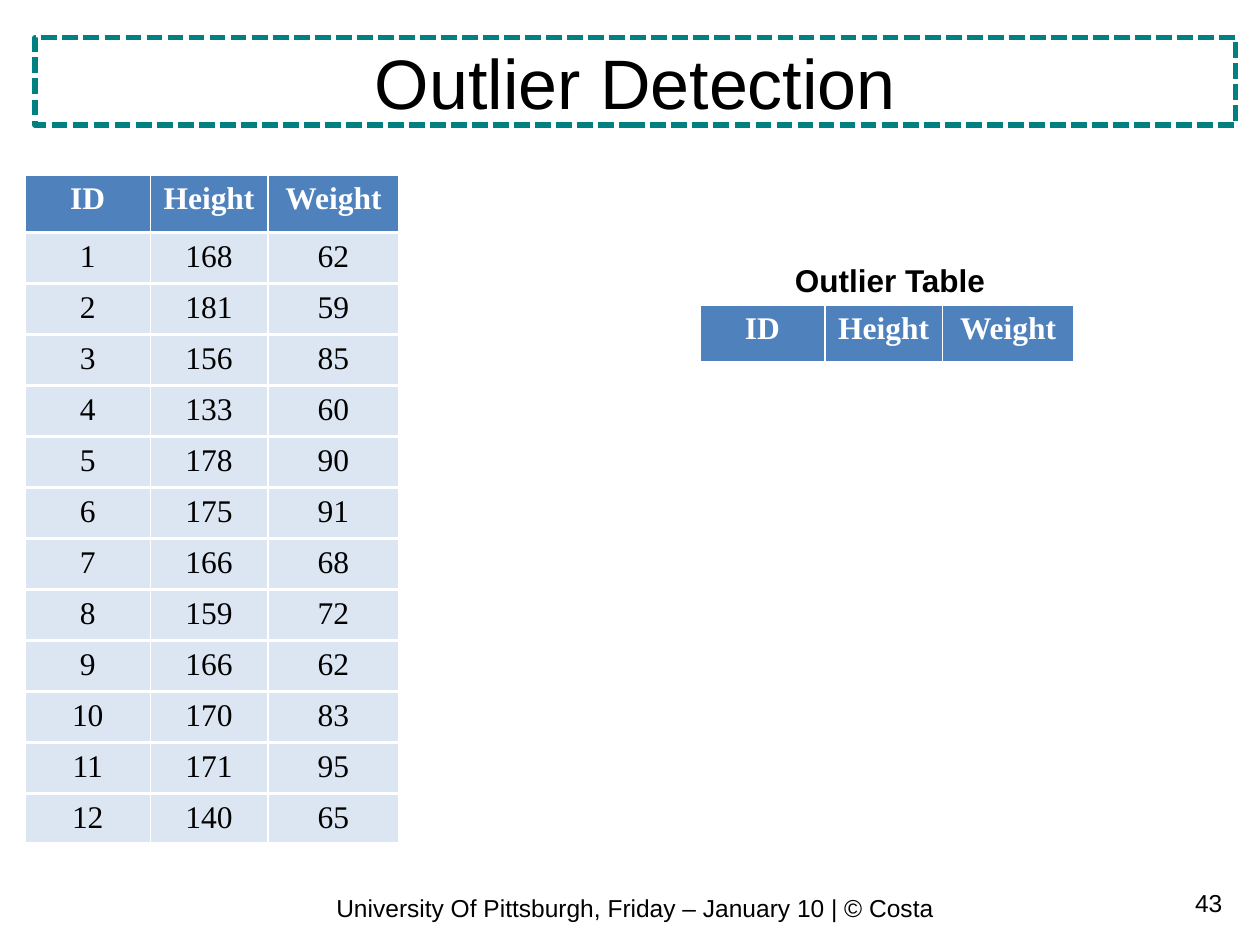
from dataclasses import dataclass
from itertools import accumulate

from lxml.etree import SubElement
from pptx import Presentation
from pptx.dml.color import RGBColor
from pptx.enum.dml import MSO_LINE
from pptx.enum.shapes import MSO_SHAPE
from pptx.enum.text import MSO_ANCHOR, PP_ALIGN
from pptx.oxml.ns import qn
from pptx.util import Pt


@dataclass(frozen=True)
class Theme:
    black: str = "000000"
    white: str = "FFFFFF"
    teal: str = "008080"
    header: str = "4F81BD"
    body: str = "DCE6F2"
    sans: str = "Arial"
    serif: str = "Times New Roman"
    title_size: float = 40
    body_size: float = 18
    footer_size: float = 14


@dataclass(frozen=True)
class Box:
    left: float
    top: float
    width: float
    height: float

    def lengths(self):
        return Pt(self.left), Pt(self.top), Pt(self.width), Pt(self.height)


@dataclass(frozen=True)
class Row:
    values: tuple
    height: float
    fill: str
    color: str
    bold: bool = False


THEME = Theme()
COLUMNS = (71.5, 67.2, 75)
BORDERS = {"a:lnL": 1, "a:lnR": 1, "a:lnT": 1, "a:lnB": 3}
HEADER = Row(("ID", "Height", "Weight"), 33.12, THEME.header, THEME.white, True)
MEASUREMENTS = [
    (168, 62), (181, 59), (156, 85), (133, 60), (178, 90), (175, 91),
    (166, 68), (159, 72), (166, 62), (170, 83), (171, 95), (140, 65),
]


def write(tf, text: str, *, size: float, font: str = THEME.sans,
          color: str = THEME.black, bold: bool = False,
          align: PP_ALIGN = PP_ALIGN.LEFT) -> None:
    p = tf.paragraphs[0]
    p.alignment = align
    r = p.add_run()
    r.text = text
    r.font.size = Pt(size)
    r.font.name = font
    r.font.bold = bold
    r.font.color.rgb = RGBColor.from_string(color)


def add_text(s, box: Box, text: str, **style) -> None:
    tf = s.shapes.add_textbox(*box.lengths()).text_frame
    tf.word_wrap = True
    write(tf, text, **style)


def add_title(s, box: Box, text: str) -> None:
    sp = s.shapes.add_shape(MSO_SHAPE.RECTANGLE, *box.lengths())
    sp.shadow.inherit = False
    sp.fill.background()
    sp.line.color.rgb = RGBColor.from_string(THEME.teal)
    sp.line.width = Pt(3)
    sp.line.dash_style = MSO_LINE.SQUARE_DOT
    sp.line._ln.find(qn("a:prstDash")).set("val", "sysDash")
    tf = sp.text_frame
    tf.word_wrap = True
    tf.vertical_anchor = MSO_ANCHOR.MIDDLE
    write(tf, text, size=THEME.title_size, align=PP_ALIGN.CENTER)


def add_borders(cell) -> None:
    tc_pr = cell._tc.get_or_add_tcPr()
    for tag, width in BORDERS.items():
        ln = SubElement(tc_pr, qn(tag), w=str(Pt(width)))
        fill = SubElement(ln, qn("a:solidFill"))
        SubElement(fill, qn("a:srgbClr"), val=THEME.white)


def add_row(s, left: float, top: float, row: Row) -> None:
    box = Box(left, top, sum(COLUMNS), row.height)
    table = s.shapes.add_table(1, len(COLUMNS), *box.lengths()).table
    table.first_row = row.bold
    table.horz_banding = False
    for column, width in zip(table.columns, COLUMNS):
        column.width = Pt(width)
    for cell, value in zip(table.rows[0].cells, row.values):
        add_borders(cell)
        cell.fill.solid()
        cell.fill.fore_color.rgb = RGBColor.from_string(row.fill)
        write(cell.text_frame, str(value), size=THEME.body_size,
              font=THEME.serif, color=row.color, bold=row.bold,
              align=PP_ALIGN.CENTER)


def add_rows(s, left: float, top: float, rows: list[Row]) -> None:
    tops = accumulate((row.height for row in rows), initial=top)
    for row_top, row in zip(tops, rows):
        add_row(s, left, row_top, row)


def main() -> None:
    prs = Presentation()
    prs.slide_width, prs.slide_height = Pt(720), Pt(540)
    s = prs.slides.add_slide(prs.slide_layouts[6])

    add_text(s, Box(20, 507, 686, 24.5),
             "University Of Pittsburgh, Friday – January 10 | © Costa",
             size=THEME.footer_size, align=PP_ALIGN.CENTER)
    add_title(s, Box(20, 21.5, 686, 50), "Outlier Detection")

    records = [Row((number, *values), 29.12, THEME.body, THEME.black)
               for number, values in enumerate(MEASUREMENTS, 1)]
    add_rows(s, 14.4, 100.2, [HEADER, *records])
    add_rows(s, 399.9, 174.5, [HEADER])

    add_text(s, Box(447.2, 145.5, 138, 29), "Outlier Table",
             size=THEME.body_size, bold=True)
    add_text(s, Box(620.6, 504, 85, 29), "43",
             size=THEME.footer_size, align=PP_ALIGN.RIGHT)
    prs.save("out.pptx")


if __name__ == "__main__":
    main()
